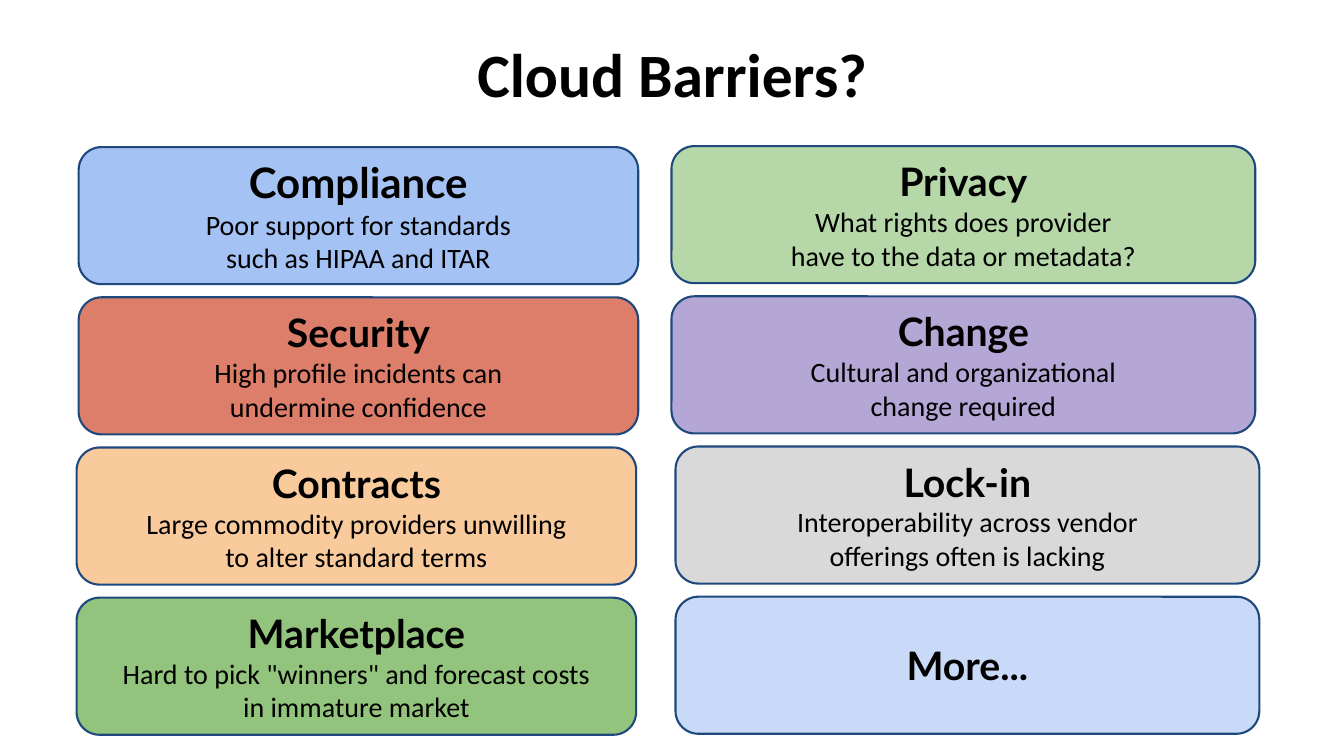
import pptx
import pptx.dml.color
import pptx.enum.shapes
import pptx.enum.text
import pptx.util

RGBColor = pptx.dml.color.RGBColor
Inches = pptx.util.Inches
Pt = pptx.util.Pt
PP_ALIGN = pptx.enum.text.PP_ALIGN
MIDDLE = pptx.enum.text.MSO_ANCHOR.MIDDLE

BLACK = RGBColor(0x00, 0x00, 0x00)
NAVY = RGBColor(0x1F, 0x49, 0x7D)
BLUE = RGBColor(0xA4, 0xC2, 0xF4)
RED = RGBColor(0xDD, 0x7E, 0x6B)
ORANGE = RGBColor(0xF9, 0xCB, 0x9C)
GREEN = RGBColor(0x93, 0xC4, 0x7D)
LIGHT_GREEN = RGBColor(0xB6, 0xD7, 0xA8)
PURPLE = RGBColor(0xB4, 0xA7, 0xD6)
GREY = RGBColor(0xD9, 0xD9, 0xD9)
LIGHT_BLUE = RGBColor(0xC9, 0xDA, 0xF8)

CARD_HEIGHT = 1.36
ROW_PITCH = 1.49

# Each column: left edge of the upper and lower pair, top, width, and its cards.
# A card is fill, heading size and text; "\n" starts a paragraph, "\v" a line.
COLUMNS = [
    (0.78, 0.76, 1.46, 5.55, [
        (BLUE, 30, "Compliance\nPoor support for standards\vsuch as HIPAA and ITAR"),
        (RED, 28, "Security\nHigh profile incidents can\nundermine confidence"),
        (ORANGE, 28, "Contracts\nLarge commodity providers unwilling\vto alter standard terms"),
        (GREEN, 28, 'Marketplace\nHard to pick "winners" and forecast costs\vin immature market'),
    ]),
    (6.66, 6.7, 1.45, 5.79, [
        (LIGHT_GREEN, 28, "Privacy\nWhat rights does provider\nhave to the data or metadata?"),
        (PURPLE, 28, "Change\nCultural and organizational\nchange required"),
        (GREY, 28, "Lock-in\nInteroperability across vendor\nofferings often is lacking"),
        (LIGHT_BLUE, 28, "More..."),
    ]),
]


def style_paragraph(paragraph, font_name, size, bold):
    paragraph.alignment = PP_ALIGN.CENTER
    paragraph.font.name = font_name
    paragraph.font.size = Pt(size)
    paragraph.font.bold = bold
    paragraph.font.color.rgb = BLACK


presentation = pptx.Presentation()
presentation.slide_width = Inches(13.33)
presentation.slide_height = Inches(7.5)
slide = presentation.slides.add_slide(presentation.slide_layouts[5])

title = slide.shapes.title
title.left, title.top = Inches(0.67), Inches(0.3)
title.width, title.height = Inches(12), Inches(0.85)
title.text_frame.text = "Cloud Barriers?"
title.text_frame.vertical_anchor = MIDDLE
style_paragraph(title.text_frame.paragraphs[0], "Calibri", 44, True)

for upper_left, lower_left, top, width, barriers in COLUMNS:
    for row, (fill, heading_size, text) in enumerate(barriers):
        card = slide.shapes.add_shape(
            pptx.enum.shapes.MSO_SHAPE.FLOWCHART_ALTERNATE_PROCESS,
            Inches(upper_left if row < 2 else lower_left),
            Inches(top + row * ROW_PITCH),
            Inches(width), Inches(CARD_HEIGHT))
        card.shadow.inherit = False
        card.fill.solid()
        card.fill.fore_color.rgb = fill
        card.line.color.rgb = NAVY
        card.line.width = Pt(1.5)

        frame = card.text_frame
        frame.word_wrap = True
        frame.vertical_anchor = MIDDLE
        frame.margin_top = frame.margin_bottom = Inches(0.03)
        frame.text = text
        heading, *details = frame.paragraphs
        style_paragraph(heading, "Lato", heading_size, True)
        for detail in details:
            style_paragraph(detail, "Calibri", 20, False)

presentation.save("out.pptx")
